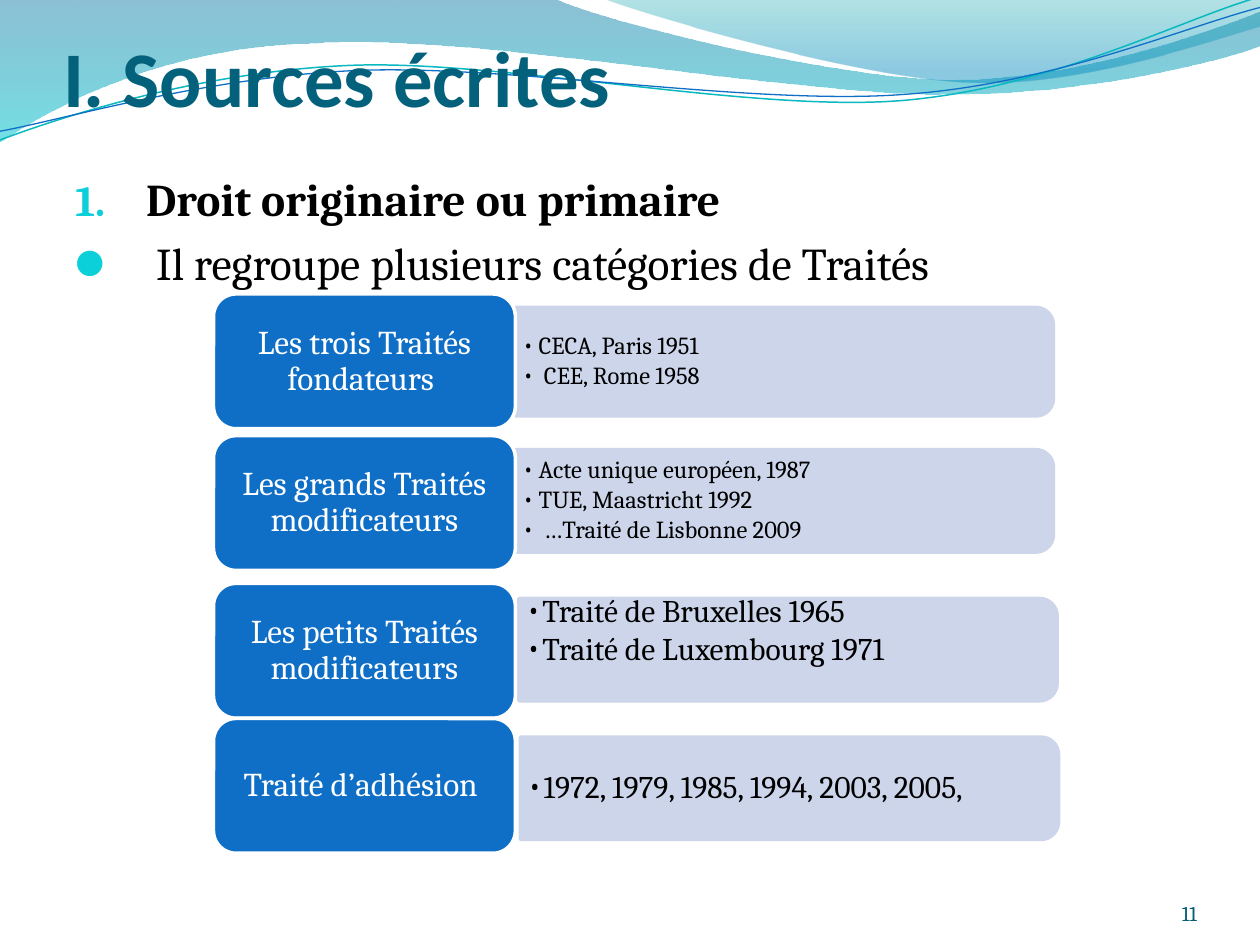
from dataclasses import dataclass
from math import cos, radians, sin
from typing import Optional

from lxml.etree import SubElement as Sub
from pptx import Presentation
from pptx.dml.color import RGBColor as Color
from pptx.enum.shapes import MSO_SHAPE as Form
from pptx.enum.text import MSO_ANCHOR as Anchor, MSO_AUTO_SIZE as Fit, PP_ALIGN as Align
from pptx.oxml.ns import qn
from pptx.util import Pt


@dataclass(frozen=True)
class Theme:
    head: str = "Calibri"
    body: str = "Cambria"
    title: str = "04617B"
    page: str = "045D75"
    mark: str = "0BD0D9"
    blue: str = "0F6FC6"
    teal: str = "0AB8BF"
    pale: str = "CCD5EA"
    ink: str = "000000"
    white: str = "FFFFFF"
    title_size: float = 45
    body_size: float = 26
    label_size: float = 19
    page_size: float = 12


@dataclass(frozen=True)
class Stop:
    hue: str
    place: float
    alpha: int


@dataclass(frozen=True)
class Wave:
    start: tuple
    steps: list
    stops: Optional[tuple] = None
    line: str = ""
    width: float = 0
    mid: tuple = (0, 0)
    tilt: float = 0


@dataclass(frozen=True)
class Row:
    label: str
    top: float
    items: list
    left: float
    y: float
    high: float = 58.5
    size: float = 14
    base: float = 5


LOOK = Theme()
WAVES = [
    Wave((0, 0), [
        (317, -0.7), (343, 12, 478, 45.4, 546, 45.4), (614, 45.4, 690, 18.7, 720, 6.5),
        (720.7, 26), (708, 31.7, 626, 54.7, 537, 54), (448, 54, 275, 20.2, 185, 24.5),
        (93, 26, 33, 59.8, -0.7, 81.4)],
        (Stop("0074A1", 0, 45), Stop("00C6CF", 1, 55))),
    Wave((345, -0.7), [
        (366.5, 8, 491, 44.6, 553.7, 46.8), (616.3, 49.7, 692, 23, 720, 15), (720, 0)],
        (Stop("00A1A9", 0, 30), Stop("008BBF", 0.8, 45))),
    Wave((0, 80), [
        (34.6, 67, 113.8, 41, 199.4, 37.4), (284.4, 33.8, 427, 64, 513.4, 57.6),
        (599.8, 51, 675.4, 10.8, 718.6, -1.4)],
        line=LOOK.teal, width=0.85, mid=(359.3, 41.4), tilt=-2.7),
    Wave((0, 75), [
        (33.8, 69, 118, 43.9, 203.8, 40.3), (290, 36.7, 430, 60.5, 516.2, 54),
        (602, 48.2, 677.5, 15.1, 720, 4.3)],
        line=LOOK.blue, width=0.75, mid=(359.7, 42.5), tilt=-2.7),
]
ROWS = [
    Row("Les trois Traités fondateurs ", 168, ["CECA, Paris 1951", " CEE, Rome 1958"],
        294.5, 175.7, high=62),
    Row("Les grands Traités modificateurs", 249,
        ["Acte unique européen, 1987", "TUE, Maastricht 1992", " …Traité de Lisbonne 2009"],
        294.5, 257),
    Row("Les petits Traités modificateurs", 333.4,
        ["Traité de Bruxelles 1965", "Traité de Luxembourg 1971"],
        296.6, 342, size=18, base=26),
    Row("Traité d’adhésion ", 410.6, ["1972, 1979, 1985, 1994, 2003, 2005,"],
        297.4, 421.2, size=18),
]


def hue(code: str) -> Color:
    return Color.from_string(code)


def spin(dot: tuple, mid: tuple, angle: float) -> tuple:
    x, y, turn = dot[0] - mid[0], dot[1] - mid[1], radians(angle)
    return (Pt(mid[0] + x * cos(turn) - y * sin(turn)),
            Pt(mid[1] + x * sin(turn) + y * cos(turn)))


def trace(shapes, start: tuple, steps: list, close: bool, mid=(0, 0), tilt=0.0):
    dots = [spin(step[i:i + 2], mid, -tilt) for step in steps for i in range(0, len(step), 2)]
    pen = shapes.build_freeform(*spin(start, mid, -tilt))
    pen.add_line_segments(dots, close=close)
    shape = pen.convert_to_shape()
    shape.shadow.inherit = False
    shape.rotation = tilt
    legs = iter(list(shape._element.iter(qn("a:lnTo"))))
    for step in steps:
        leg = next(legs)
        if len(step) == 6:
            curve = Sub(leg.getparent(), qn("a:cubicBezTo"))
            leg.addprevious(curve)
            for part in (leg, next(legs), next(legs)):
                curve.append(part[0])
                part.getparent().remove(part)
    return shape


def draw_wave(shapes, wave: Wave) -> None:
    shape = trace(shapes, wave.start, wave.steps, bool(wave.stops), wave.mid, wave.tilt)
    if not wave.stops:
        shape.fill.background()
        shape.line.color.rgb = hue(wave.line)
        shape.line.width = Pt(wave.width)
        return
    shape.line.fill.background()
    shape.fill.gradient()
    shape.fill.gradient_angle = 270
    for slot, stop in zip(shape.fill.gradient_stops, wave.stops):
        slot.color.rgb = hue(stop.hue)
        slot.position = stop.place
        Sub(slot._gs[0], qn("a:alpha"), val=str(stop.alpha * 1000))


def frame(shape, pads: tuple, anchor: Anchor):
    text = shape.text_frame
    text.word_wrap = True
    text.auto_size = Fit.NONE
    text.vertical_anchor = anchor
    text.margin_left, text.margin_top, text.margin_right, text.margin_bottom = map(Pt, pads)
    return text


def style(para, name: str, size: float, tint: str, bold: bool = False, align=Align.LEFT) -> None:
    para.alignment = align
    font = para.font
    font.name, font.size, font.bold = name, Pt(size), bold
    font.color.rgb = hue(tint)


def bullet(para, indent: float, sign: str = "•", tint: str = "", scale: int = 100) -> None:
    props = para._p.get_or_add_pPr()
    props.set("marL", str(Pt(indent)))
    props.set("indent", str(-Pt(indent)))
    if tint:
        Sub(Sub(props, qn("a:buClr")), qn("a:srgbClr"), val=tint)
    Sub(props, qn("a:buSzPct"), val=str(scale * 1000))
    Sub(props, qn("a:buFont"), typeface=LOOK.body)
    if sign == "1.":
        Sub(props, qn("a:buAutoNum"), type="arabicPeriod")
    else:
        Sub(props, qn("a:buChar"), char=sign)


def draw_row(shapes, row: Row) -> None:
    right, low, r, c = row.left + 307.5, row.y + row.high, 10, 4.5
    panel = trace(shapes, (row.left, row.y), [
        (right - r, row.y), (right - c, row.y, right, row.y + c, right, row.y + r),
        (right, low - r), (right, low - c, right - c, low, right - r, low),
        (row.left, low)], True)
    panel.fill.solid()
    panel.fill.fore_color.rgb = panel.line.color.rgb = hue(LOOK.pale)
    panel.line.width = Pt(2)
    text = frame(panel, (4.3, 5, 7.2, row.base), Anchor.MIDDLE)
    for i, item in enumerate(row.items):
        para = text.add_paragraph() if i else text.paragraphs[0]
        para.text = item
        para.line_spacing = 0.9
        para.space_after = Pt(row.size * 0.15)
        bullet(para, 9)
        style(para, LOOK.body, row.size, LOOK.ink)

    label = shapes.add_shape(Form.ROUNDED_RECTANGLE, Pt(122), Pt(row.top), Pt(172.5), Pt(77))
    label.shadow.inherit = False
    label.fill.solid()
    label.fill.fore_color.rgb = hue(LOOK.blue)
    label.line.color.rgb = hue(LOOK.white)
    label.line.width = Pt(2)
    para = frame(label, (9.4, 6.5, 9.4, 6.5), Anchor.MIDDLE).paragraphs[0]
    para.text = row.label
    para.line_spacing = 0.9
    style(para, LOOK.body, LOOK.label_size, LOOK.white, align=Align.CENTER)


def main() -> None:
    deck = Presentation()
    deck.slide_width, deck.slide_height = Pt(720), Pt(540)
    shapes = deck.slides.add_slide(deck.slide_layouts[5]).shapes
    for wave in WAVES:
        draw_wave(shapes, wave)

    title = shapes.title
    title.left, title.top, title.width, title.height = Pt(36), Pt(26), Pt(648), Pt(44.6)
    shapes._spTree.append(title._element)
    para = frame(title, (0, 3.6, 0, 0), Anchor.BOTTOM).paragraphs[0]
    para.text = "I. Sources écrites"
    style(para, LOOK.head, LOOK.title_size, LOOK.title, True)

    box = shapes.add_textbox(Pt(36), Pt(94.3), Pt(648), Pt(404))
    text = frame(box, (7.2, 3.6, 7.2, 3.6), Anchor.TOP)
    heads = [("1.", "Droit originaire ou primaire", True, 95),
             ("●", " Il regroupe plusieurs catégories de Traités", False, 73)]
    for i, (sign, words, bold, scale) in enumerate(heads):
        para = text.add_paragraph() if i else text.paragraphs[0]
        para.text = words
        para.space_before = Pt(LOOK.body_size * 0.2)
        bullet(para, 40.5, sign, LOOK.mark, scale)
        style(para, LOOK.body, LOOK.body_size, LOOK.ink, bold)

    page = shapes.add_textbox(Pt(624), Pt(500.4), Pt(60), Pt(28.8))
    para = frame(page, (0, 0, 0, 0), Anchor.BOTTOM).paragraphs[0]
    para.text = "11"
    style(para, LOOK.body, LOOK.page_size, LOOK.page, align=Align.RIGHT)

    for row in ROWS:
        draw_row(shapes, row)
    deck.save("out.pptx")


if __name__ == "__main__":
    main()
